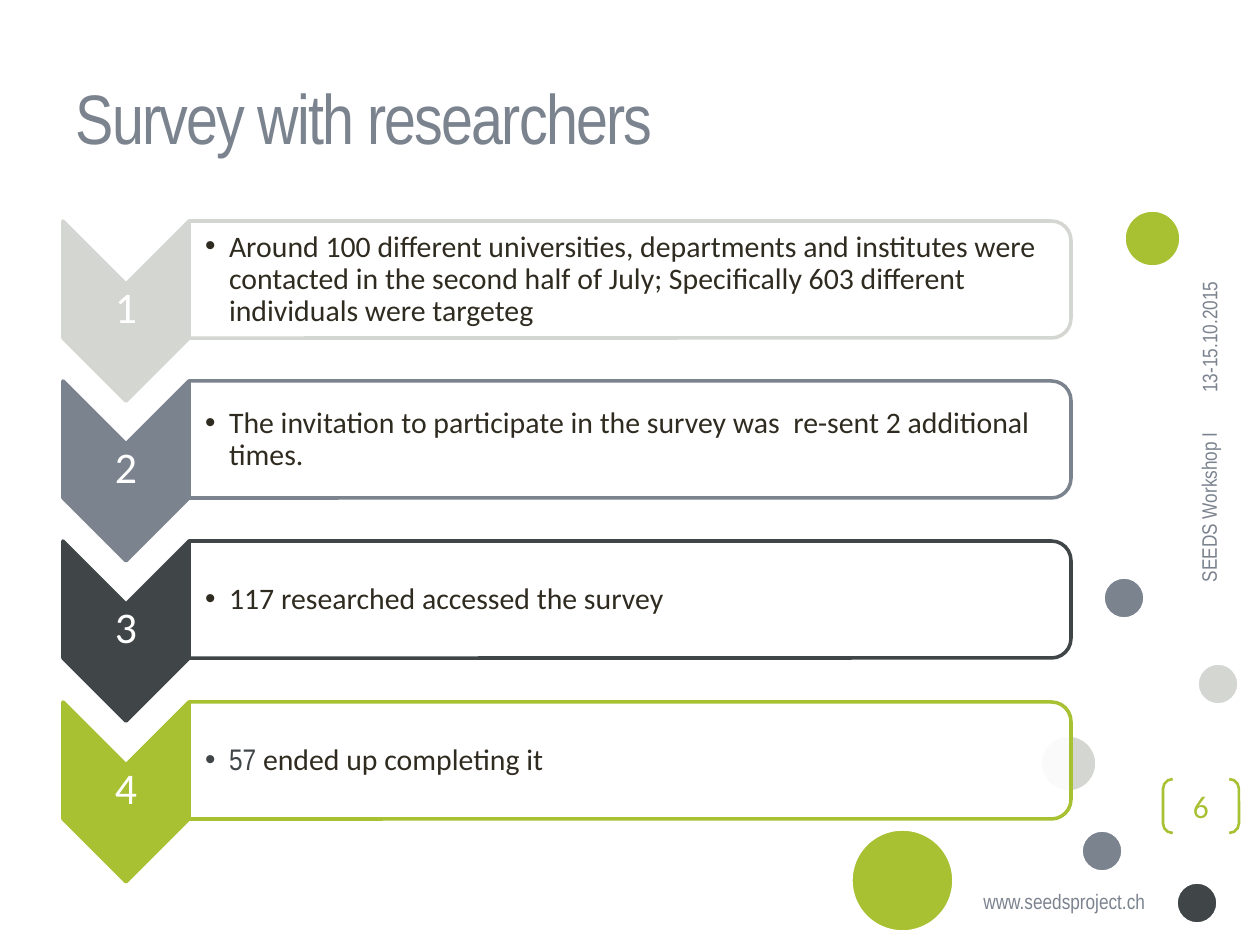
from lxml.etree import SubElement
from pptx import Presentation
from pptx.dml.color import RGBColor
from pptx.enum.shapes import MSO_SHAPE
from pptx.enum.text import MSO_ANCHOR, PP_ALIGN
from pptx.oxml.ns import qn
from pptx.util import Pt

PX = 914400 / 126
GREEN, SLATE, DARK, PALE = "A7C133", "7B838F", "404548", "D4D6D2"
WHITE, INK = "FFFFFF", "2F2B20"
NARROW, BODY = "Arial Narrow", "Calibri"

CIRCLES = [
    (851, 829, 103, GREEN), (1124, 210, 57, GREEN), (1176, 882, 42, DARK),
    (1040, 735, 57, PALE), (1197, 663, 42, PALE), (1081, 830, 42, SLATE),
    (1103, 577, 42, SLATE),
]
STEPS = [
    (PALE, [("Around 100 different universities, departments and institutes were "
             "contacted in the second half of July; Specifically 603 different "
             "individuals were targeteg", BODY, INK)]),
    (SLATE, [("The invitation to participate in the survey was  re-sent 2 "
              "additional times.", BODY, INK)]),
    (DARK, [("117 researched accessed the survey", BODY, INK)]),
    (GREEN, [("57 ", NARROW, DARK), ("ended up completing it", BODY, INK)]),
]


def px(n):
    return round(n * PX)


def rgb(value):
    return RGBColor.from_string(value)


def set_all(obj, values):
    for name, value in values.items():
        setattr(obj, name, value)


def frame(box, rotation):
    x, y, w, h = box
    if rotation in (90, 270):
        x, y, w, h = x + (w - h) / 2, y + (h - w) / 2, h, w
    return [px(n) for n in (x, y, w, h)]


def add_shape(s, kind, box, fill, line, width=2, rotation=0):
    sp = s.shapes.add_shape(kind, *frame(box, rotation))
    sp.rotation = rotation
    sp.shadow.inherit = False
    if fill:
        sp.fill.solid()
        sp.fill.fore_color.rgb = rgb(fill)
    else:
        sp.fill.background()
    sp.line.color.rgb = rgb(line)
    sp.line.width = Pt(width)
    return sp


def write(sp, runs, size, align=PP_ALIGN.LEFT, spacing=None, **tf_format):
    tf = sp.text_frame
    set_all(tf, {"word_wrap": True, "vertical_anchor": MSO_ANCHOR.MIDDLE, **tf_format})
    p = tf.paragraphs[0]
    set_all(p, {"alignment": align, "line_spacing": spacing})
    for text, font, color in runs:
        r = p.add_run()
        r.text = text
        set_all(r.font, {"name": font, "size": Pt(size)})
        r.font.color.rgb = rgb(color)
    return p


def add_text(s, box, runs, size, rotation=0, **text_format):
    sp = s.shapes.add_textbox(*frame(box, rotation))
    sp.rotation = rotation
    return write(sp, runs, size, **text_format)


def margins(left, other):
    return {"margin_left": px(left), "margin_top": px(other),
            "margin_right": px(other), "margin_bottom": px(other)}


def add_bullet(p):
    pPr = p._p.get_or_add_pPr()
    pPr.set("marL", str(px(24)))
    pPr.set("indent", str(-px(24)))
    SubElement(pPr, qn("a:buFont"), typeface="Arial")
    SubElement(pPr, qn("a:buChar"), char="•")


def add_circles(s):
    for x, y, size, color in CIRCLES:
        add_shape(s, MSO_SHAPE.OVAL, (x, y, size, size), color, WHITE)


def add_footer(s):
    add_text(s, (971, 882, 194, 38), [("www.seedsproject.ch", NARROW, SLATE)], 12,
             word_wrap=False, vertical_anchor=MSO_ANCHOR.TOP)
    add_text(s, (1186, 420, 45, 221), [("SEEDS Workshop I", NARROW, SLATE)], 12,
             rotation=270, align=PP_ALIGN.RIGHT)
    add_text(s, (1188, 242, 42, 163), [("13-15.10.2015", NARROW, SLATE)], 12,
             rotation=270)
    sp = add_shape(s, MSO_SHAPE.DOUBLE_BRACKET, (1163, 779, 76, 54), None, GREEN, 1.5)
    sp.adjustments[0] = 0.18
    write(sp, [("6", BODY, GREEN)], 18, align=PP_ALIGN.CENTER, **margins(0, 0))


def add_title(s, box):
    sp = s.shapes.title
    set_all(sp, dict(zip(("left", "top", "width", "height"), frame(box, 0))))
    p = write(sp, [("Survey with researchers", NARROW, SLATE)], 40)
    p.runs[0].font._element.set("spc", "-100")


def add_step(s, box, number, color, runs):
    x, y, w, h = box
    arrow = 126
    add_shape(s, MSO_SHAPE.CHEVRON, (x, y, arrow, 180), color, color, rotation=90)
    add_text(s, (x, y + 63, arrow, 54), [(str(number), BODY, WHITE)], 25,
             align=PP_ALIGN.CENTER, spacing=0.9, vertical_anchor=MSO_ANCHOR.TOP,
             **margins(2, 2))
    panel = add_shape(s, MSO_SHAPE.ROUND_2_SAME_RECTANGLE,
                      (x + arrow, y, w - arrow, h), WHITE, color, rotation=90)
    fill = panel._element.spPr.find(qn("a:solidFill"))
    SubElement(fill[0], qn("a:alpha"), val="90000")
    p = add_text(s, (x + arrow, y + 6, w - arrow - 6, h - 12), runs, 17,
                 spacing=0.9, **margins(16, 1))
    add_bullet(p)


def add_steps(s, box):
    x, y, w, h = box
    row_h = 117
    for i, (color, runs) in enumerate(STEPS):
        top = y + i * (h - 180) // (len(STEPS) - 1)
        add_step(s, (x, top, w, row_h), i + 1, color, runs)


def main():
    prs = Presentation()
    prs.slide_width, prs.slide_height = px(1260), px(945)
    s = prs.slides.add_slide(prs.slide_layouts[5])
    add_circles(s)
    add_footer(s)
    add_title(s, (63, 38, 1008, 158))
    add_steps(s, (63, 221, 1008, 661))
    prs.save("out.pptx")


if __name__ == "__main__":
    main()
